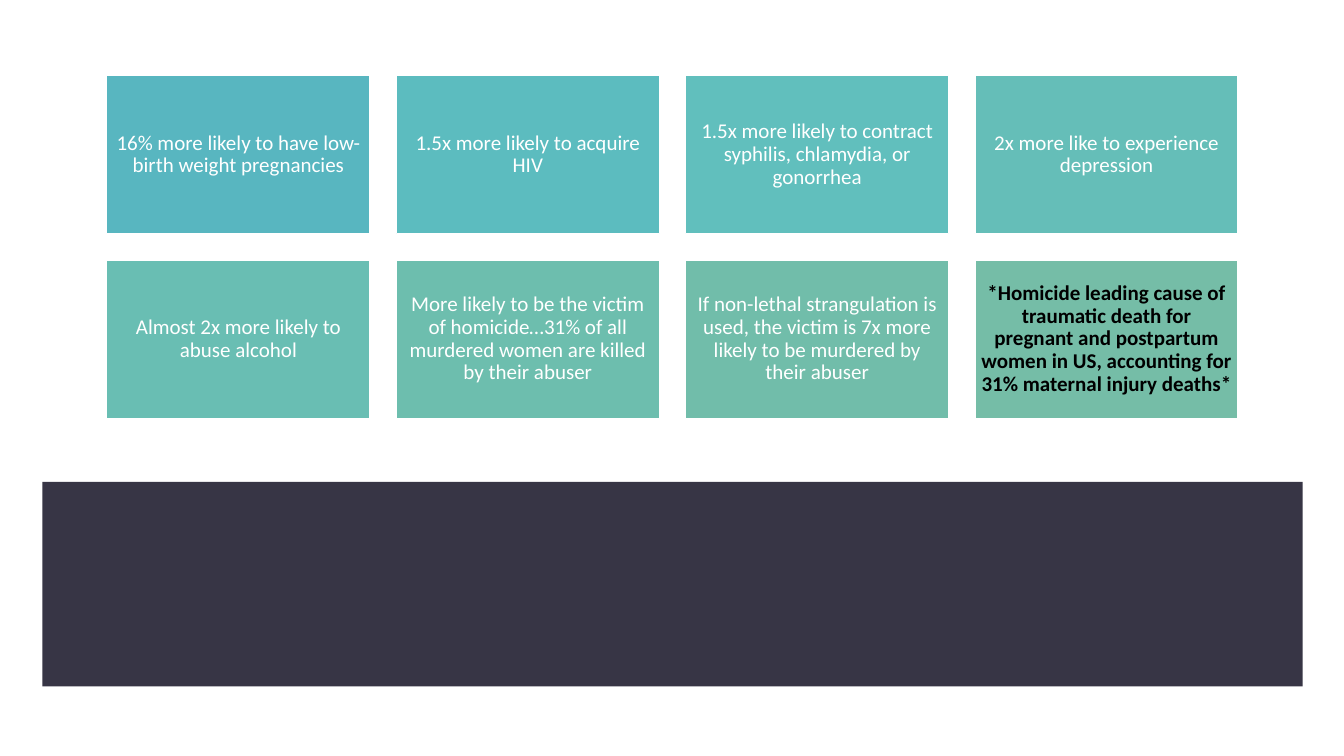
"""Build a slide with eight risk tiles above a dark band."""
from dataclasses import dataclass

from pptx import Presentation
from pptx.dml.color import RGBColor
from pptx.enum.shapes import MSO_SHAPE
from pptx.enum.text import MSO_ANCHOR, PP_ALIGN
from pptx.shapes.autoshape import Shape
from pptx.slide import Slide
from pptx.util import Inches, Pt

RECT = MSO_SHAPE.RECTANGLE
MIDDLE = MSO_ANCHOR.MIDDLE
CENTER = PP_ALIGN.CENTER

WHITE = RGBColor(0xFF, 0xFF, 0xFF)
BLACK = RGBColor(0x00, 0x00, 0x00)
NAVY = RGBColor(0x37, 0x35, 0x45)
BLUE = RGBColor(0x58, 0xB6, 0xC0)
CYAN = RGBColor(0x5C, 0xBC, 0xBF)
AQUA = RGBColor(0x61, 0xBF, 0xBD)
TEAL = RGBColor(0x65, 0xBE, 0xB8)
MINT = RGBColor(0x69, 0xBE, 0xB3)
JADE = RGBColor(0x6D, 0xBE, 0xAE)
SAGE = RGBColor(0x71, 0xBD, 0xAA)
GREEN = RGBColor(0x75, 0xBD, 0xA7)

COLS = 4
LEFT, TOP = 1.06, 0.75
WIDTH, HEIGHT = 2.61, 1.57
STEP_X, STEP_Y = 2.87, 1.83
INSET = Inches(0.06)
FRAME = {
    "word_wrap": True,
    "vertical_anchor": MIDDLE,
    "margin_left": INSET,
    "margin_right": INSET,
    "margin_top": INSET,
    "margin_bottom": INSET,
}
PARA = {"alignment": CENTER, "line_spacing": 0.9}
FONT = {"name": "Calibri", "size": Pt(15)}


@dataclass
class Tile:
    """Hold the wording and look of one risk tile."""

    text: str
    fill: RGBColor
    ink: RGBColor = WHITE
    bold: bool = False


TILES = [
    Tile("16% more likely to have low-birth weight pregnancies", BLUE),
    Tile("1.5x more likely to acquire HIV", CYAN),
    Tile("1.5x more likely to contract syphilis, chlamydia, or gonorrhea", AQUA),
    Tile("2x more like to experience depression", TEAL),
    Tile("Almost 2x more likely to abuse alcohol", MINT),
    Tile("More likely to be the victim of homicide…31% of all murdered women "
         "are killed by their abuser", JADE),
    Tile("If non-lethal strangulation is used, the victim is 7x more likely "
         "to be murdered by their abuser", SAGE),
    Tile("*Homicide leading cause of traumatic death for pregnant and "
         "postpartum women in US, accounting for 31% maternal injury deaths*",
         GREEN, BLACK, True),
]


def apply(target: object, values: dict) -> None:
    """Set each named attribute on the target."""
    for name, value in values.items():
        setattr(target, name, value)


def add_box(slide: Slide, x: float, y: float, w: float, h: float,
            fill: RGBColor) -> Shape:
    """Draw a flat filled rectangle without an outline."""
    box = slide.shapes.add_shape(RECT, Inches(x), Inches(y), Inches(w), Inches(h))
    box.shadow.inherit = False
    box.fill.solid()
    box.fill.fore_color.rgb = fill
    box.line.fill.background()
    return box


def add_tile(slide: Slide, index: int, tile: Tile) -> None:
    """Draw one tile at its place in the grid."""
    row, col = divmod(index, COLS)
    box = add_box(slide, LEFT + col * STEP_X, TOP + row * STEP_Y,
                  WIDTH, HEIGHT, tile.fill)
    box.line.color.rgb = WHITE
    box.line.width = Pt(0.85)
    frame = box.text_frame
    apply(frame, FRAME)
    para = frame.paragraphs[0]
    apply(para, PARA)
    run = para.add_run()
    run.text = tile.text
    apply(run.font, FONT | {"bold": tile.bold})
    run.font.color.rgb = tile.ink


def main() -> None:
    """Build and save the slide."""
    deck = Presentation()
    deck.slide_width, deck.slide_height = Inches(13.33), Inches(7.5)
    slide = deck.slides.add_slide(deck.slide_layouts[6])
    add_box(slide, 0.42, 4.78, 12.5, 2.03, NAVY)
    for index, tile in enumerate(TILES):
        add_tile(slide, index, tile)
    deck.save("out.pptx")


if __name__ == "__main__":
    main()
